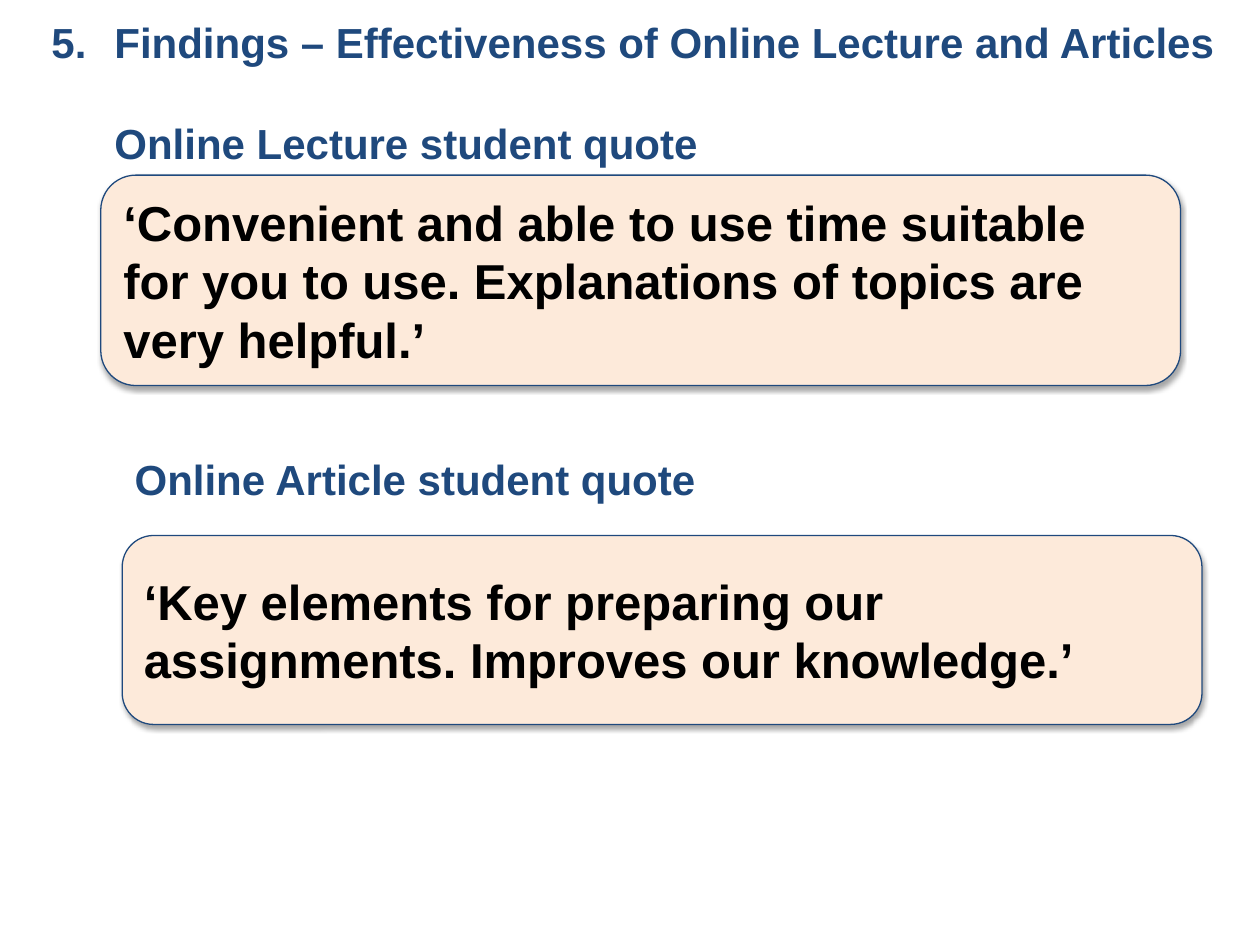
from lxml.etree import SubElement
from pptx import Presentation
from pptx.dml.color import RGBColor
from pptx.enum.shapes import MSO_SHAPE
from pptx.enum.text import MSO_ANCHOR, PP_ALIGN
from pptx.oxml.ns import qn
from pptx.util import Inches, Pt

COLORS = {"navy": "1F497D", "peach": "FDEADA", "black": "000000"}


def write(para, text, size=24, color="navy", left=0, hang=0, before=0, start=None):
    run = para.add_run()
    run.text = text
    run.font.name = "Arial"
    run.font.size = Pt(size)
    run.font.bold = True
    run.font.color.rgb = RGBColor.from_string(COLORS[color])
    para.alignment = PP_ALIGN.LEFT
    para.space_before = Pt(before)
    props = para._p.get_or_add_pPr()
    props.set("marL", str(Inches(left)))
    props.set("indent", str(Inches(-hang)))
    if start:
        SubElement(props, qn("a:buFont"), typeface="+mj-lt")
        SubElement(props, qn("a:buAutoNum"), type="arabicPeriod", startAt=str(start))


deck = Presentation()
deck.slide_width = Inches(10)
deck.slide_height = Inches(7.5)
slide = deck.slides.add_slide(deck.slide_layouts[6])

title = slide.shapes.add_textbox(Inches(0.31), Inches(0.08), Inches(9.69), Inches(1.31))
frame = title.text_frame
frame.word_wrap = True
write(frame.paragraphs[0], "Findings – Effectiveness of Online Lecture and Articles",
      left=0.5, hang=0.5, start=5)
write(frame.add_paragraph(), "Online Lecture student quote", left=0.5, before=29)

quotes = [
    (0.8, 1.39, 1.67, "‘Convenient and able to use time suitable for you to use. "
                      "Explanations of topics are very helpful.’"),
    (0.97, 4.25, 1.5, "‘Key elements for preparing our assignments. "
                      "Improves our knowledge.’"),
]
for left, top, height, quote in quotes:
    card = slide.shapes.add_shape(MSO_SHAPE.ROUNDED_RECTANGLE, Inches(left), Inches(top),
                                  Inches(8.57), Inches(height))
    card.fill.solid()
    card.fill.fore_color.rgb = RGBColor.from_string(COLORS["peach"])
    card.line.color.rgb = RGBColor.from_string(COLORS["navy"])
    card.line.width = Pt(0.75)
    card.shadow.inherit = False
    effects = card._element.spPr.find(qn("a:effectLst"))
    shadow = SubElement(effects, qn("a:outerShdw"), blurRad=str(Pt(3.1)),
                        dist=str(Pt(1.8)), dir="5400000", rotWithShape="0")
    shade = SubElement(shadow, qn("a:srgbClr"), val=COLORS["black"])
    SubElement(shade, qn("a:alpha"), val="35000")
    card.text_frame.word_wrap = True
    card.text_frame.vertical_anchor = MSO_ANCHOR.MIDDLE
    write(card.text_frame.paragraphs[0], quote, size=28, color="black")

label = slide.shapes.add_textbox(Inches(0.97), Inches(3.55), Inches(4.69), Inches(0.5))
label.text_frame.word_wrap = False
write(label.text_frame.paragraphs[0], "Online Article student quote")

deck.save("out.pptx")
